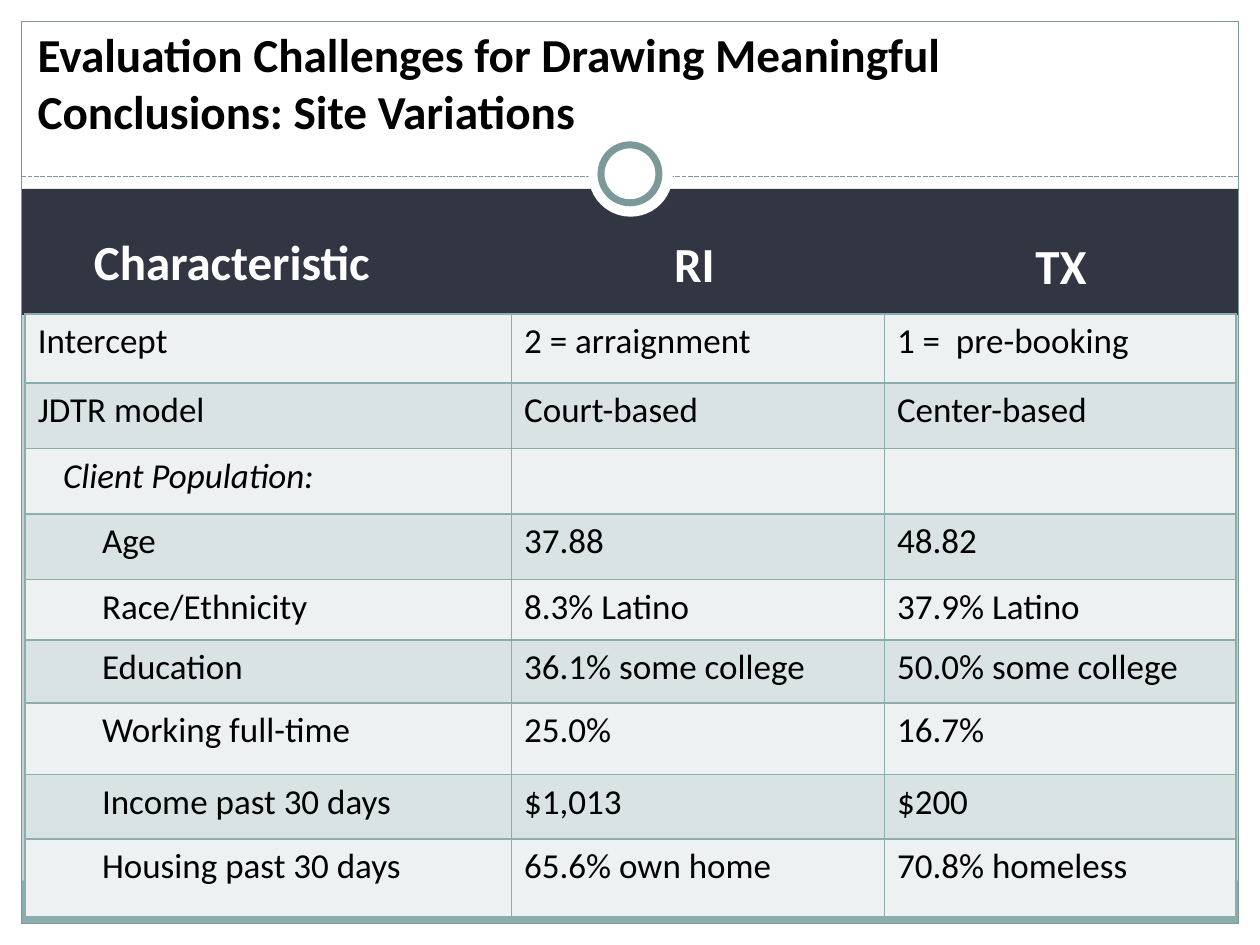
from lxml.etree import SubElement, fromstring
from pptx import Presentation
from pptx.dml.color import RGBColor
from pptx.enum.dml import MSO_LINE as Dash
from pptx.enum.shapes import MSO_CONNECTOR as Link, MSO_SHAPE as Kind
from pptx.enum.text import MSO_ANCHOR as Anchor, PP_ALIGN as Align
from pptx.oxml.ns import qn
from pptx.util import Emu, Pt

SCALE = 9144
WHITE, BLACK, NAVY = "FFFFFF", "000000", "323643"
TEAL, GRAY, BACK = "8CADAE", "7C999A", "C5D1D7"
BANDS = ["EEF1F2", "DAE3E3"]
COLS = [386, 296, 279]
ROWS = [
    (55, 0, "Intercept", "2 = arraignment", "1 =  pre-booking"),
    (52, 0, "JDTR model", "Court-based", "Center-based"),
    (52, 20, "Client Population:", "", ""),
    (52, 51, "Age", "37.88", "48.82"),
    (48, 51, "Race/Ethnicity", "8.3% Latino", "37.9% Latino"),
    (50, 51, "Education", "36.1% some college", "50.0% some college"),
    (57, 51, "Working full-time", "25.0%", "16.7%"),
    (51, 51, "Income past 30 days", "$1,013", "$200"),
    (62, 51, "Housing past 30 days", "65.6% own home", "70.8% homeless"),
]
HEADS = [("Characteristic", 16, 17, 302), ("RI", 420, 19, 228), ("TX", 711, 20, 228)]
SHADE = (
    '<a:effectLst xmlns:a="http://schemas.openxmlformats.org/drawingml/2006/main">'
    '<a:outerShdw blurRad="38100" dist="38100" dir="2700000" algn="tl">'
    '<a:srgbClr val="000000"><a:alpha val="43000"/></a:srgbClr>'
    "</a:outerShdw></a:effectLst>"
)


def px(n):
    """Turn px into EMU."""
    return Emu(n * SCALE)


def tint(code):
    """Turn a hex string into a colour."""
    return RGBColor.from_string(code)


def apply(item, form):
    """Set each attribute in a dict of format values."""
    for name, value in form.items():
        setattr(item, name, value)


def shape(slide, kind, box, fill=None, line=None, width=1):
    """Add a preset shape with a plain fill and line."""
    item = slide.shapes.add_shape(kind, *map(px, box))
    item.shadow.inherit = False
    if fill:
        item.fill.solid()
        item.fill.fore_color.rgb = tint(fill)
    else:
        item.fill.background()
    if line:
        item.line.color.rgb = tint(line)
        item.line.width = Pt(width)
    else:
        item.line.fill.background()
    return item


def write(para, text, size, color, **form):
    """Add a styled run to a paragraph."""
    run = para.add_run()
    run.text = text
    apply(run.font, {"name": "Calibri", "size": Pt(size), **form})
    run.font.color.rgb = tint(color)
    return run


def label(slide, box, text, size, color, anchor, align, low=5, gap=0):
    """Add a bold text box and return its run."""
    frame = slide.shapes.add_textbox(*map(px, box)).text_frame
    apply(frame, {"word_wrap": True, "vertical_anchor": anchor, "margin_bottom": px(low)})
    para = frame.paragraphs[0]
    apply(para, {"alignment": align, "space_before": Pt(gap)})
    return write(para, text, size, color, bold=True)


def frame(slide, box):
    """Draw the white margins, foot band and outer border."""
    x, y, w, h = box
    right, foot = x + w, y + h
    for side in [(0, 0, 1000, 158), (0, foot, 1000, 750 - foot),
                 (0, 0, x, 750), (right, 0, 1000 - right, 750)]:
        shape(slide, Kind.RECTANGLE, side, WHITE)
    shape(slide, Kind.RECTANGLE, (x, y + 133, w, 100), NAVY)
    shape(slide, Kind.RECTANGLE, (x, foot - 34, w, 34), TEAL)
    rule = slide.shapes.add_connector(
        Link.STRAIGHT, px(x), px(y + 123), px(right), px(y + 123))
    apply(rule.line, {"width": Pt(0.9), "dash_style": Dash.SQUARE_DOT})
    rule.line.color.rgb = tint(GRAY)
    props = rule._element.spPr
    SubElement(props, qn("a:effectLst"))
    shape(slide, Kind.RECTANGLE, box, line=GRAY, width=0.75)


def ring(slide, box):
    """Draw the ring on its white disc."""
    x, y, w, h = box
    shape(slide, Kind.OVAL, box, WHITE)
    shape(slide, Kind.OVAL, (x + 10, y + 10, w - 21, h - 21), WHITE, GRAY, 4)


def title(slide, box):
    """Place the slide title."""
    label(slide, box, "Evaluation Challenges for Drawing Meaningful "
          "Conclusions: Site Variations", 27, BLACK, Anchor.BOTTOM, Align.LEFT, low=2)


def heads(slide, box):
    """Place the column heads on the dark band."""
    x, y, w, h = box
    for text, left, top, wide in HEADS:
        run = label(slide, (x + left, y + top, wide, 80), text, 28, WHITE,
                    Anchor.MIDDLE, Align.CENTER, gap=5.6)
    fill = run.font._element.find(qn("a:solidFill"))
    fill.addnext(fromstring(SHADE))


def edge(cell):
    """Draw the four borders of a cell."""
    props = cell._tc.get_or_add_tcPr()
    for spot, side in enumerate(["a:lnL", "a:lnR", "a:lnT", "a:lnB"]):
        line = props.makeelement(qn(side), {"w": str(Pt(1))})
        fill = SubElement(line, qn("a:solidFill"))
        SubElement(fill, qn("a:srgbClr"), val=TEAL)
        props.insert(spot, line)


def grid(slide, box):
    """Build the table of site values."""
    table = slide.shapes.add_table(len(ROWS), len(COLS), *map(px, box)).table
    apply(table, {"first_row": False, "horz_banding": False})
    for col, wide in zip(table.columns, COLS):
        col.width = px(wide)
    for r, (high, inset, *texts) in enumerate(ROWS):
        table.rows[r].height = px(high)
        for c, text in enumerate(texts):
            cell = table.cell(r, c)
            cell.fill.solid()
            cell.fill.fore_color.rgb = tint(BANDS[r % 2])
            edge(cell)
            para = cell.text_frame.paragraphs[0]
            if c == 0 and inset:
                para._p.get_or_add_pPr().set("marL", str(px(inset)))
            if text:
                write(para, text, 20, BLACK, italic=inset == 20)


def main():
    """Build and save the slide."""
    deck = Presentation()
    apply(deck, {"slide_width": px(1000), "slide_height": px(750)})
    slide = deck.slides.add_slide(deck.slide_layouts[6])
    slide.background.fill.solid()
    slide.background.fill.fore_color.rgb = tint(BACK)
    frame(slide, (17, 17, 966, 716))
    ring(slide, (467, 105, 67, 67))
    title(slide, (20, 29, 933, 83))
    heads(slide, (17, 150, 966, 100))
    grid(slide, (20, 249, sum(COLS), sum(row[0] for row in ROWS)))
    deck.save("out.pptx")


if __name__ == "__main__":
    main()
